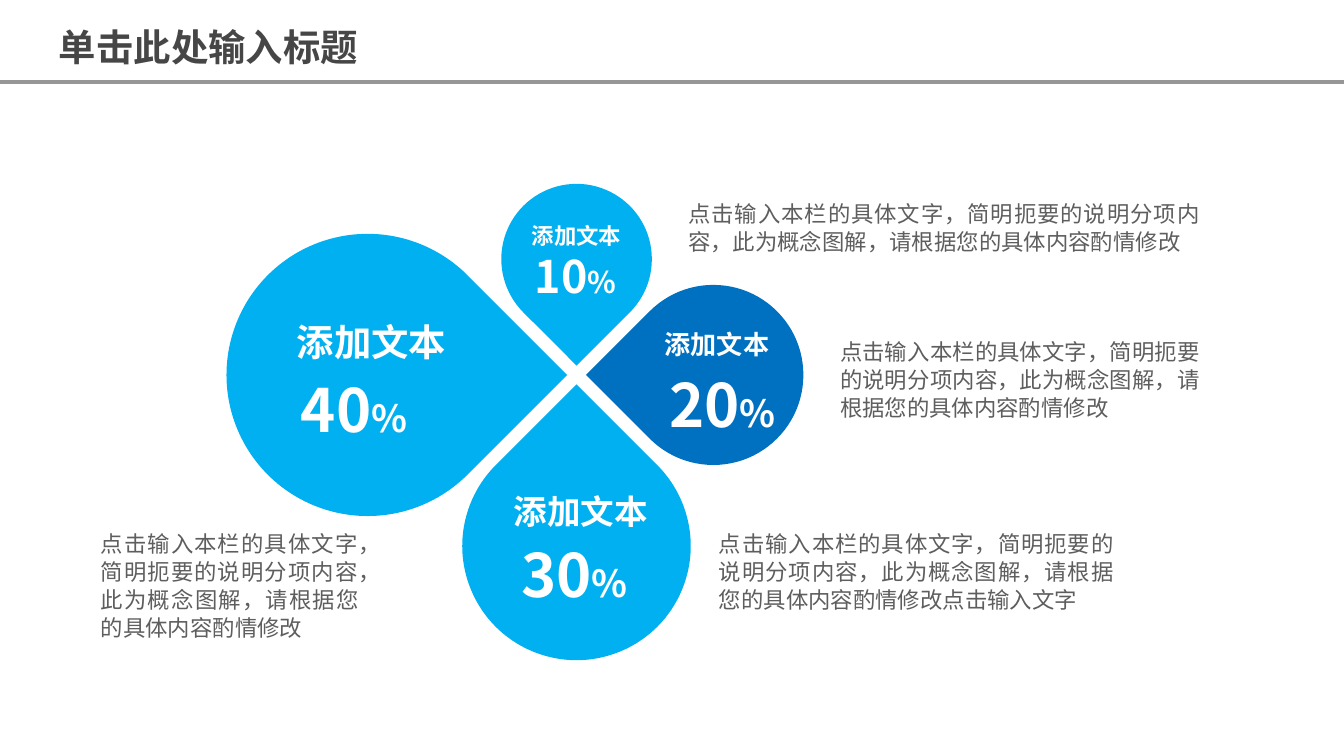
from dataclasses import dataclass
from math import sqrt

from lxml import etree
from pptx import Presentation
from pptx.dml.color import RGBColor
from pptx.enum.shapes import MSO_CONNECTOR, MSO_SHAPE
from pptx.enum.text import MSO_ANCHOR, MSO_AUTO_SIZE, PP_ALIGN
from pptx.oxml.ns import qn
from pptx.util import Inches, Pt

STRAIGHT = MSO_CONNECTOR.STRAIGHT
TEARDROP = MSO_SHAPE.TEAR
TOP, MIDDLE = MSO_ANCHOR.TOP, MSO_ANCHOR.MIDDLE
GROW = MSO_AUTO_SIZE.SHAPE_TO_FIT_TEXT
LEFT, CENTER, JUSTIFY = PP_ALIGN.LEFT, PP_ALIGN.CENTER, PP_ALIGN.JUSTIFY


@dataclass(frozen=True)
class Theme:
    font: str = "Noto Sans CJK SC"
    light_blue: str = "00B0F0"
    dark_blue: str = "0070C0"
    white: str = "FFFFFF"
    title: str = "464646"
    body: str = "5E5E5E"
    rule: str = "969696"
    title_size: int = 20
    body_size: int = 12
    body_leading: int = 15


THEME = Theme()
SLIDE_WIDTH = 10
SLIDE_HEIGHT = SLIDE_WIDTH * 9 / 16
HUB_X, HUB_Y = 4.29, 2.79
TIP_GAP = 0.07
LABEL = "添加文本"
DESCRIPTION = "点击输入本栏的具体文字，简明扼要的说明分项内容，此为概念图解，请根据您的具体内容酌情修改"

# direction from hub, radius, colour, label box, label size,
# share, share box, number size, percent sign size
PETALS = [
    ((-1, 0), 1.05, THEME.light_blue, (2.05, 2.37, 1.43, 0.34), 20,
     "40", (2.14, 2.72, 1.02, 0.64), 32, 20),
    ((0, 1), 0.85, THEME.light_blue, (3.73, 3.65, 1.18, 0.3), 18,
     "30", (3.78, 3.95, 1.02, 0.64), 32, 20),
    ((1, 0), 0.67, THEME.dark_blue, (4.84, 2.44, 0.99, 0.24), 14,
     "20", (4.88, 2.68, 1.02, 0.64), 32, 20),
    ((0, -1), 0.56, THEME.light_blue, (3.91, 1.65, 0.76, 0.2), 12,
     "10", (3.88, 1.8, 0.82, 0.5), 24, 16),
]
# Turn that brings the teardrop's top-right tip to the hub
TURNS = {(-1, 0): 45, (0, -1): 135, (1, 0): 225, (0, 1): 315}

DESCRIPTIONS = [
    ((5.12, 1.48, 3.81, 0.42), DESCRIPTION),
    ((6.25, 2.51, 2.68, 0.63), DESCRIPTION),
    ((5.35, 3.94, 2.94, 0.63), DESCRIPTION + "点击输入文字"),
    ((0.75, 3.94, 1.92, 0.84), DESCRIPTION),
]


def add_text(slide, box, runs, *, color, align=LEFT, anchor=MIDDLE,
             leading=None, fill=None, inset=True, wrap=True):
    """Add a text box; each run is (text, size, bold)."""
    text_box = slide.shapes.add_textbox(*map(Inches, box))
    if fill:
        text_box.fill.solid()
        text_box.fill.fore_color.rgb = RGBColor.from_string(fill)
    frame = text_box.text_frame
    frame.word_wrap = wrap
    frame.auto_size = GROW
    frame.vertical_anchor = anchor
    if not inset:
        frame.margin_left = frame.margin_right = 0
        frame.margin_top = frame.margin_bottom = 0
    paragraph = frame.paragraphs[0]
    paragraph.alignment = align
    if leading:
        paragraph.line_spacing = leading
    for text, size, bold in runs:
        run = paragraph.add_run()
        run.text = text
        run.font.size = Pt(size)
        run.font.bold = bold
        run.font.name = THEME.font
        run.font.color.rgb = RGBColor.from_string(color)
        east_asian = etree.SubElement(run.font._element, qn("a:ea"))
        east_asian.set("typeface", THEME.font)


def add_title_rule(slide):
    rule = slide.shapes.add_connector(
        STRAIGHT, 0, Inches(0.61), Inches(SLIDE_WIDTH), Inches(0.61))
    rule.line.color.rgb = RGBColor.from_string(THEME.rule)
    rule.line.width = Pt(1.75)
    etree.SubElement(rule._element.spPr, qn("a:effectLst"))


def add_petal(slide, direction, radius, color):
    """Add a teardrop whose tip points at the hub."""
    reach = TIP_GAP + radius * sqrt(2)
    left = HUB_X + direction[0] * reach - radius
    top = HUB_Y + direction[1] * reach - radius
    petal = slide.shapes.add_shape(
        TEARDROP, Inches(left), Inches(top),
        Inches(2 * radius), Inches(2 * radius))
    petal.rotation = TURNS[direction]
    petal.shadow.inherit = False
    petal.fill.solid()
    petal.fill.fore_color.rgb = RGBColor.from_string(color)
    petal.line.fill.background()


def main():
    presentation = Presentation()
    presentation.slide_width = Inches(SLIDE_WIDTH)
    presentation.slide_height = Inches(SLIDE_HEIGHT)
    slide = presentation.slides.add_slide(presentation.slide_layouts[6])

    add_title_rule(slide)
    for (direction, radius, color, label_box, label_size,
         share, share_box, number_size, sign_size) in PETALS:
        add_petal(slide, direction, radius, color)
        add_text(slide, label_box, [(LABEL, label_size, True)],
                 color=THEME.white, align=CENTER, fill=color, inset=False)
        add_text(slide, share_box,
                 [(share, number_size, True), ("%", sign_size, True)],
                 color=THEME.white, wrap=False)
    for box, description in DESCRIPTIONS:
        add_text(slide, box, [(description, THEME.body_size, False)],
                 color=THEME.body, align=JUSTIFY, anchor=TOP,
                 leading=Pt(THEME.body_leading), inset=False)
    add_text(slide, (0.34, 0.06, 2.61, 0.5),
             [("单击此处输入标题", THEME.title_size, True)],
             color=THEME.title, leading=1.2)

    presentation.save("out.pptx")


if __name__ == "__main__":
    main()
